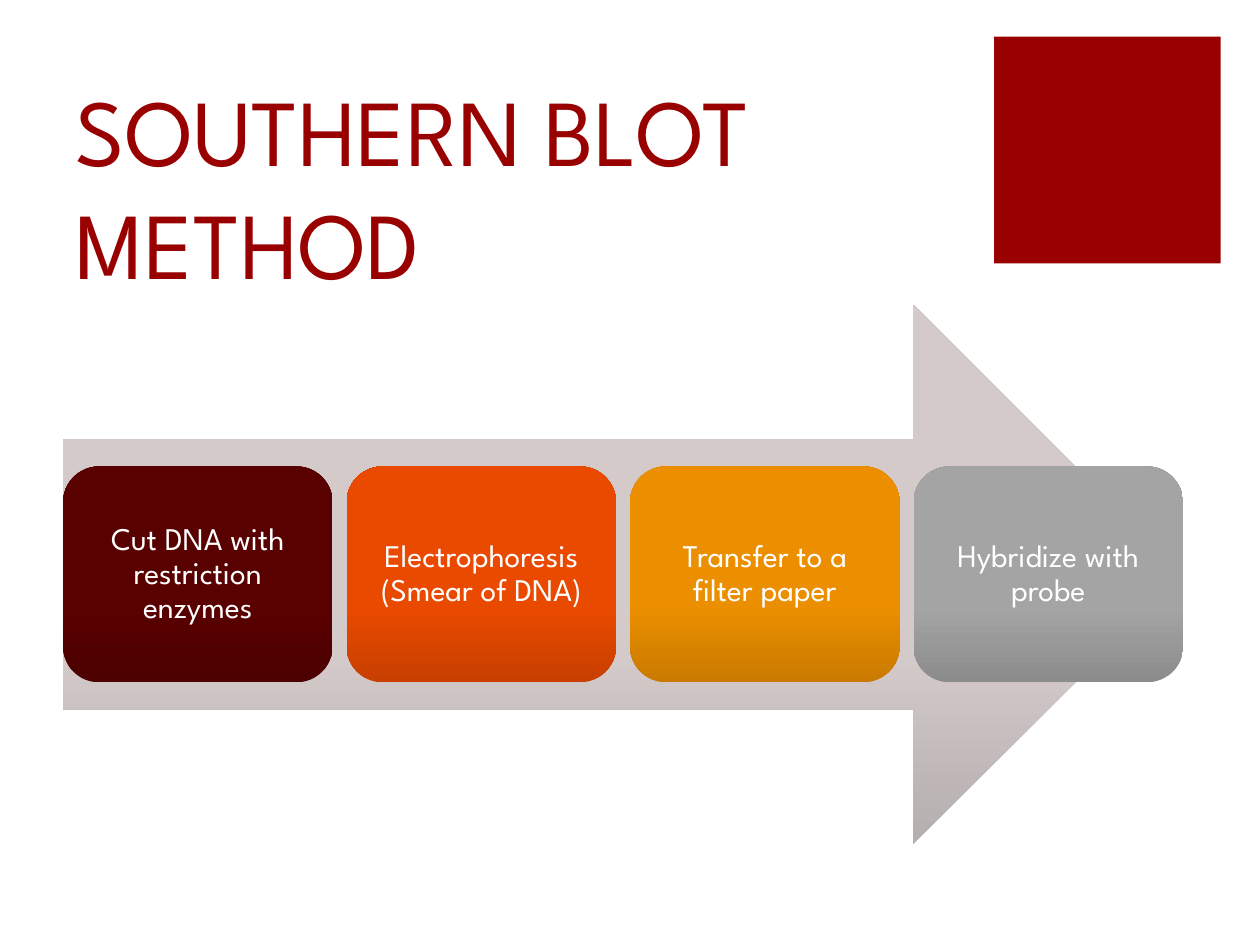
from pptx import Presentation
from pptx.dml.color import RGBColor
from pptx.enum.shapes import MSO_SHAPE
from pptx.enum.text import MSO_ANCHOR, MSO_AUTO_SIZE, PP_ALIGN
from pptx.util import Cm, Pt

FONT = "League Spartan"
COLORS = {"red": "990000", "white": "FFFFFF"}
# Gradients run from the bottom colour up to the main colour
ARROW = ("B4AEAE", "D4CACA")
STEPS = [
    ("Cut DNA with restriction enzymes", ("4C0000", "590000")),
    ("Electrophoresis (Smear of DNA)", ("C83F00", "E94A00")),
    ("Transfer to a filter paper", ("C97A00", "EB8F00")),
    ("Hybridize with probe", ("8C8C8C", "A4A4A4")),
]


def rgb(name):
    return RGBColor.from_string(COLORS[name])


def add_plain_shape(s, kind, x, y, w, h):
    sp = s.shapes.add_shape(kind, Cm(x), Cm(y), Cm(w), Cm(h))
    sp.shadow.inherit = False
    sp.line.fill.background()
    return sp


def fill_gradient(sp, colors):
    sp.fill.gradient()
    sp.fill.gradient_angle = 90
    for stop, position, color in zip(sp.fill.gradient_stops, (0, 0.35), colors):
        stop.position = position
        stop.color.rgb = RGBColor.from_string(color)


def style_paragraph(p, size, color, align):
    p.alignment = align
    p.font.name = FONT
    p.font.size = Pt(size)
    p.font.color.rgb = rgb(color)


def add_corner_square(s, x, y, side):
    sp = add_plain_shape(s, MSO_SHAPE.RECTANGLE, x, y, side, side)
    sp.fill.solid()
    sp.fill.fore_color.rgb = rgb("red")


def set_title(s, text, x, y, w, h):
    title = s.shapes.title
    title.left, title.top, title.width, title.height = Cm(x), Cm(y), Cm(w), Cm(h)
    tf = title.text_frame
    tf.text = text
    tf.word_wrap = True
    tf.auto_size = MSO_AUTO_SIZE.NONE
    tf.vertical_anchor = MSO_ANCHOR.BOTTOM
    style_paragraph(tf.paragraphs[0], 54, "red", PP_ALIGN.LEFT)


def add_step(s, text, colors, x, y, w, h):
    sp = add_plain_shape(s, MSO_SHAPE.ROUNDED_RECTANGLE, x, y, w, h)
    fill_gradient(sp, colors)
    tf = sp.text_frame
    tf.word_wrap = True
    tf.vertical_anchor = MSO_ANCHOR.MIDDLE
    tf.margin_left = tf.margin_right = tf.margin_top = tf.margin_bottom = Cm(0.18)
    tf.text = text
    p = tf.paragraphs[0]
    p.line_spacing = 0.9
    style_paragraph(p, 18, "white", PP_ALIGN.CENTER)


def add_process(s, x, y, w, h):
    # Arrow behind the steps
    fill_gradient(add_plain_shape(s, MSO_SHAPE.RIGHT_ARROW, x, y, w, h), ARROW)

    # Steps share the width and sit on the arrow's centre line
    gap = 0.28
    step_w = (w - gap * (len(STEPS) - 1)) / len(STEPS)
    step_h = 0.4 * h
    for i, (text, colors) in enumerate(STEPS):
        add_step(s, text, colors, x + i * (step_w + gap),
                 y + (h - step_h) / 2, step_w, step_h)


def main():
    prs = Presentation()
    prs.slide_width, prs.slide_height = Cm(25.4), Cm(19.05)
    s = prs.slides.add_slide(prs.slide_layouts[5])
    add_corner_square(s, 20.04, 0.74, 4.57)
    set_title(s, "SOUTHERN BLOT METHOD", 1.27, 2.97, 19.33, 3.18)
    add_process(s, 1.27, 6.14, 22.58, 10.88)
    prs.save("out.pptx")


if __name__ == "__main__":
    main()
